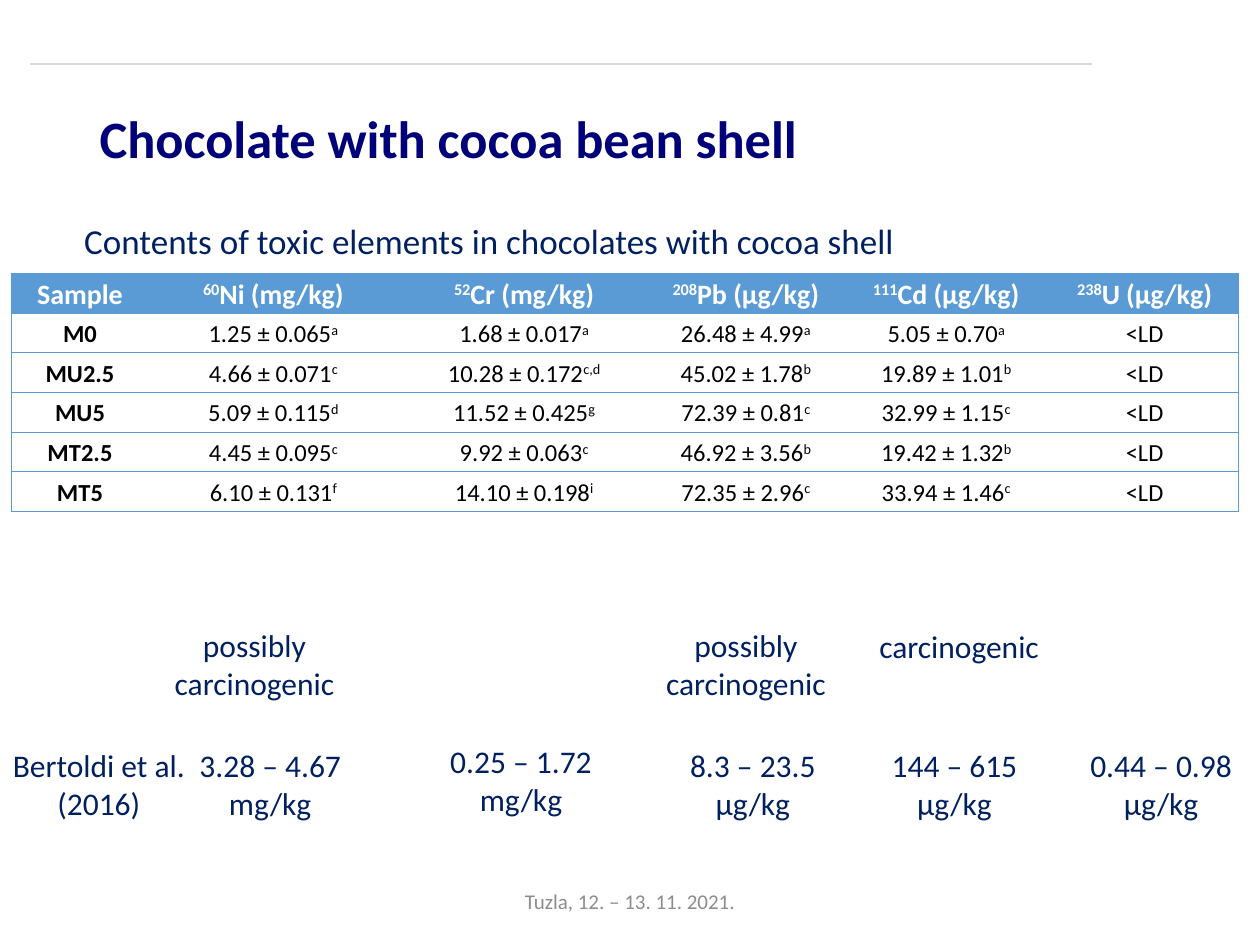
from lxml.etree import SubElement
from pptx import Presentation
from pptx.dml.color import RGBColor
from pptx.enum.shapes import MSO_CONNECTOR as Connector
from pptx.enum.text import MSO_ANCHOR as Anchor, PP_ALIGN as Align
from pptx.oxml.ns import qn
from pptx.util import Inches, Pt

NAVY, BLUE, WHITE, BLACK = "002060", "5B9BD5", "FFFFFF", "000000"


def color(value):
    return RGBColor.from_string(value)


def assign(target, values):
    for name, value in values.items():
        setattr(target, name, value)


class SlideBuilder:
    font_name = "Calibri"

    def __init__(self, page):
        self.page = page

    def add_spans(self, para, text, size, ink, bold=False, **layout):
        assign(para, layout)
        for index, piece in enumerate(text.split("^")):
            if not piece:
                continue
            span = para.add_run()
            span.text = piece
            assign(span.font, {"name": self.font_name, "size": Pt(size), "bold": bold})
            span.font.color.rgb = color(ink)
            if index % 2:
                span._r.get_or_add_rPr().set("baseline", "30000")

    def title(self, text, left, top, width, height):
        box = self.page.shapes.title
        assign(box, {"left": Inches(left), "top": Inches(top),
                     "width": Inches(width), "height": Inches(height)})
        assign(box.text_frame, {"vertical_anchor": Anchor.MIDDLE, "word_wrap": True})
        self.add_spans(box.text_frame.paragraphs[0], text, 30, "000078", True,
                       alignment=Align.LEFT, line_spacing=0.9)

    def text(self, text, left, top, width, height, size=18, ink=NAVY,
             align=Align.CENTER, anchor=Anchor.TOP, wrap=True):
        box = self.page.shapes.add_textbox(
            Inches(left), Inches(top), Inches(width), Inches(height))
        assign(box.text_frame, {"word_wrap": wrap, "vertical_anchor": anchor})
        self.add_spans(box.text_frame.paragraphs[0], text, size, ink, alignment=align)

    def rule(self, left, right, top):
        line = self.page.shapes.add_connector(
            Connector.STRAIGHT, Inches(left), Inches(top), Inches(right), Inches(top))
        line.line.color.rgb = color("D9D9D9")
        line.line.width = Pt(1)
        SubElement(line._element.spPr, qn("a:effectLst"))

    def borders(self, cell, visible):
        properties = cell._tc.get_or_add_tcPr()
        for side in "LRTB":
            edge = SubElement(properties, qn(f"a:ln{side}"), w=str(Pt(0.5)))
            if side in visible:
                fill = SubElement(edge, qn("a:solidFill"))
                SubElement(fill, qn("a:srgbClr"), val=BLUE)
            else:
                SubElement(edge, qn("a:noFill"))

    def table(self, rows, widths, left, top, height):
        frame = self.page.shapes.add_table(
            len(rows), len(widths), Inches(left), Inches(top),
            Inches(sum(widths)), Inches(height))
        grid = frame.table
        for column, width in zip(grid.columns, widths):
            column.width = Inches(width)
        for row, values in enumerate(rows):
            header = row == 0
            for col, value in enumerate(values):
                cell = grid.cell(row, col)
                first, last = col == 0, col == len(widths) - 1
                self.borders(cell, "TB" + "L" * first + "R" * last)
                cell.fill.solid()
                cell.fill.fore_color.rgb = color(BLUE if header else WHITE)
                assign(cell, {"vertical_anchor": Anchor.MIDDLE,
                              "margin_left": Inches(0.07), "margin_right": Inches(0.07),
                              "margin_top": 0, "margin_bottom": 0})
                self.add_spans(cell.text_frame.paragraphs[0], value,
                               16 if header else 14, WHITE if header else BLACK,
                               header or first, alignment=Align.CENTER,
                               line_spacing=1.07, space_after=Pt(8))


CONTENTS = [
    ["Sample", "^60^Ni (mg/kg)", "^52^Cr (mg/kg)", "^208^Pb (µg/kg)",
     "^111^Cd (µg/kg)", "^238^U (µg/kg)"],
    ["M0", "1.25 ± 0.065^a", "1.68 ± 0.017^a", "26.48 ± 4.99^a", "5.05 ± 0.70^a", "<LD"],
    ["MU2.5", "4.66 ± 0.071^c", "10.28 ± 0.172^c,d", "45.02 ± 1.78^b", "19.89 ± 1.01^b", "<LD"],
    ["MU5", "5.09 ± 0.115^d", "11.52 ± 0.425^g", "72.39 ± 0.81^c", "32.99 ± 1.15^c", "<LD"],
    ["MT2.5", "4.45 ± 0.095^c", "9.92 ± 0.063^c", "46.92 ± 3.56^b", "19.42 ± 1.32^b", "<LD"],
    ["MT5", "6.10 ± 0.131^f", "14.10 ± 0.198^i", "72.35 ± 2.96^c", "33.94 ± 1.46^c", "<LD"],
]
REFERENCE_RANGES = [
    ("Bertoldi et al. (2016)", -0.1, 5.87, 1.77),
    ("3.28 – 4.67 mg/kg", 1.26, 5.87, 1.77),
    ("0.25 – 1.72 mg/kg", 3.31, 5.84, 1.65),
    ("8.3 – 23.5 µg/kg", 5.15, 5.87, 1.65),
    ("144 – 615 µg/kg", 6.75, 5.87, 1.65),
    ("0.44 – 0.98 µg/kg", 8.39, 5.87, 1.65),
]


def main():
    deck = Presentation()
    assign(deck, {"slide_width": Inches(10), "slide_height": Inches(7.5)})
    builder = SlideBuilder(deck.slides.add_slide(deck.slide_layouts[5]))
    builder.rule(0.24, 8.67, 0.51)
    builder.title("Chocolate with cocoa bean shell", 0.69, 0.4, 8.62, 1.45)
    builder.text("Contents of toxic elements in chocolates with cocoa shell",
                 0.57, 1.69, 6.69, 0.77, size=20, align=Align.LEFT, wrap=False)
    builder.table(CONTENTS, [1.09, 1.98, 2, 1.52, 1.66, 1.49], 0.09, 2.17, 1.89)
    for left in (1.26, 5.16):
        builder.text("possibly carcinogenic", left, 4.92, 1.52, 0.71)
    builder.text("carcinogenic", 6.88, 4.93, 1.52, 0.4, align=Align.LEFT)
    for text, left, top, width in REFERENCE_RANGES:
        builder.text(text, left, top, width, 0.71)
    builder.text("Tuzla, 12. – 13. 11. 2021.", 3.31, 6.95, 3.38, 0.4,
                 size=12, ink="8C8C8C", anchor=Anchor.MIDDLE)
    deck.save("out.pptx")


if __name__ == "__main__":
    main()
